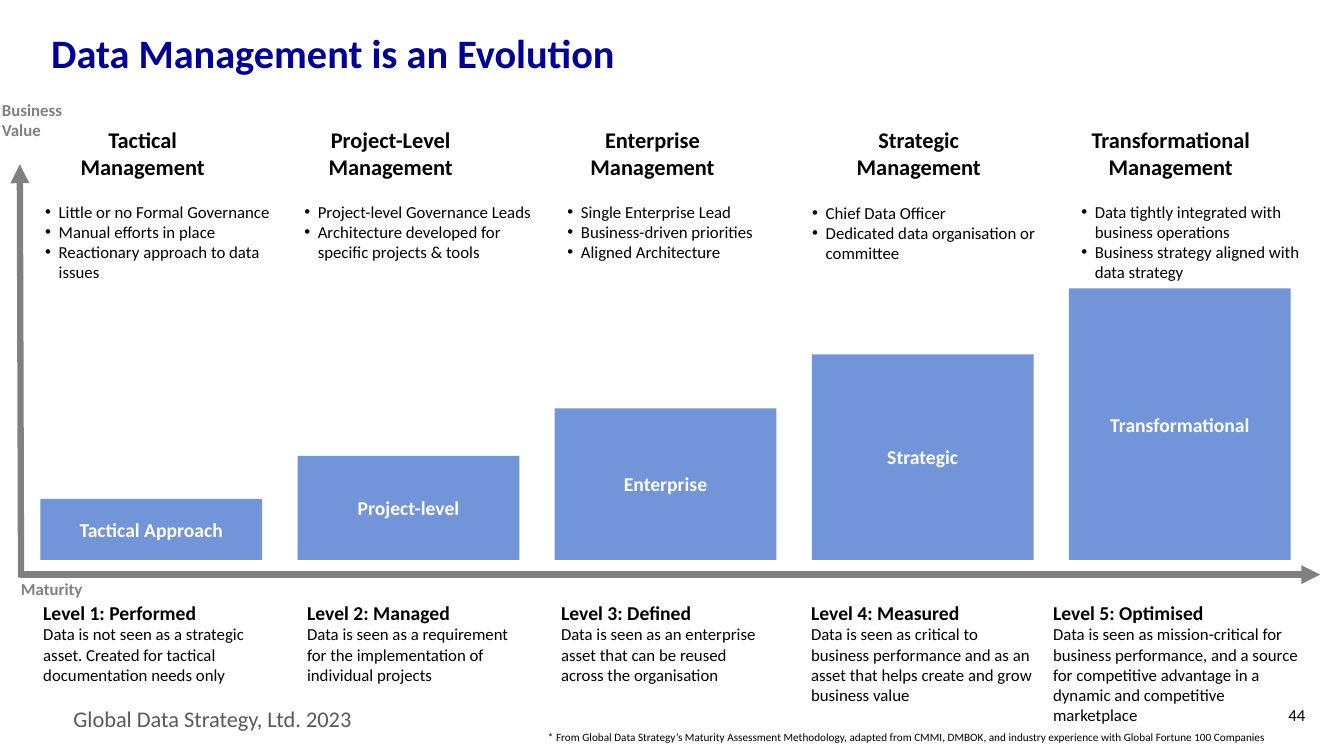
"""Build the slide showing data management maturity as five rising steps."""
from lxml.etree import SubElement
from pptx import Presentation
from pptx.dml.color import RGBColor
from pptx.enum.shapes import MSO_CONNECTOR, MSO_SHAPE
from pptx.enum.text import MSO_ANCHOR, MSO_AUTO_SIZE, PP_ALIGN
from pptx.oxml.ns import qn
from pptx.util import Cm, Pt

NAVY = RGBColor(0x00, 0x00, 0x99)
BLUE = RGBColor(0x72, 0x94, 0xD8)
GREY = RGBColor(0x80, 0x80, 0x80)
DARK_GREY = RGBColor(0x59, 0x59, 0x59)
BLACK = RGBColor(0x00, 0x00, 0x00)
WHITE = RGBColor(0xFF, 0xFF, 0xFF)
FONT = "Calibri"

TITLE = "Data Management is an Evolution"
FOOTER = "Global Data Strategy, Ltd. 2023"
PAGE_NUMBER = "44"
FOOTNOTE = ("* From Global Data Strategy’s Maturity Assessment Methodology, adapted from CMMI, "
            "DMBOK, and industry experience with Global Fortune 100 Companies")
VALUE_AXIS = ["Business", "Value"]
MATURITY_AXIS = ["Maturity"]

STAGES = [
    {"bar": "Tactical Approach", "height": 1.54,
     "heading": ["Tactical", "Management"], "heading_left": 0.84,
     "bullets": ["Little or no Formal Governance", "Manual efforts in place",
                 "Reactionary approach to data issues"],
     "bullets_at": (0.89, 4.95, 6.6),
     "level": "Level 1: Performed", "level_at": (0.84, 6.63),
     "detail": "Data is not seen as a strategic asset. Created for tactical "
               "documentation needs only"},
    {"bar": "Project-level", "height": 2.62,
     "heading": ["Project-Level Management"], "heading_left": 7.09,
     "bullets": ["Project-level Governance Leads",
                 "Architecture developed for specific projects & tools"],
     "bullets_at": (7.42, 4.95, 6.6),
     "level": "Level 2: Managed", "level_at": (7.49, 5.69),
     "detail": "Data is seen as a requirement for the implementation of individual projects"},
    {"bar": "Enterprise", "height": 3.82,
     "heading": ["Enterprise Management"], "heading_left": 13.69,
     "bullets": ["Single Enterprise Lead", "Business-driven priorities",
                 "Aligned Architecture"],
     "bullets_at": (14.05, 4.95, 5.77),
     "level": "Level 3: Defined", "level_at": (13.89, 5.69),
     "detail": "Data is seen as an enterprise asset that can be reused across the organisation"},
    {"bar": "Strategic", "height": 5.18,
     "heading": ["Strategic Management"], "heading_left": 20.4,
     "bullets": ["Chief Data Officer", "Dedicated data organisation or committee"],
     "bullets_at": (20.22, 4.98, 6.38),
     "level": "Level 4: Measured", "level_at": (20.19, 6.17),
     "detail": "Data is seen as critical to business performance and as an asset that "
               "helps create and grow business value"},
    {"bar": "Transformational", "height": 6.84,
     "heading": ["Transformational Management"], "heading_left": 26.75,
     "bullets": ["Data tightly integrated with business operations",
                 "Business strategy aligned with data strategy"],
     "bullets_at": (27.0, 4.95, 6.38),
     "level": "Level 5: Optimised", "level_at": (26.29, 6.86),
     "detail": "Data is seen as mission-critical for business performance, and a source for "
               "competitive advantage in a dynamic and competitive marketplace"},
]

AXES = [((0.53, 14.55), (0.5, 4.14)), ((0.5, 14.48), (33.27, 14.48))]
BAR_LEFT, BAR_STEP, BAR_WIDTH, BASELINE = 1.02, 6.48, 5.59, 14.11
HEADING_TOP, HEADING_WIDTH, LEVEL_TOP = 3.05, 5.51, 15.01


def write(frame, text, size=12, color=BLACK, bold=False, align=PP_ALIGN.LEFT,
          spacing=None, bullet=False, more=False):
    """Write one paragraph, adding it after existing ones when more is set."""
    para = frame.add_paragraph() if more else frame.paragraphs[0]
    para.alignment = align
    if spacing:
        para.line_spacing = spacing
    if bullet:
        properties = para._p.get_or_add_pPr()
        properties.set("marL", str(Cm(0.34)))
        properties.set("indent", str(-Cm(0.34)))
        SubElement(properties, qn("a:buFont")).set("typeface", "Arial")
        SubElement(properties, qn("a:buChar")).set("char", "•")
    span = para.add_run()
    span.text = text
    span.font.name = FONT
    span.font.size = Pt(size)
    span.font.bold = bold
    span.font.color.rgb = color


def add_text(page, lines, left, top, width, height, anchor=MSO_ANCHOR.TOP, grow=True, **style):
    """Add a wrapping text box with one paragraph per line."""
    frame = page.shapes.add_textbox(Cm(left), Cm(top), Cm(width), Cm(height)).text_frame
    frame.word_wrap = True
    frame.vertical_anchor = anchor
    frame.auto_size = MSO_AUTO_SIZE.SHAPE_TO_FIT_TEXT if grow else MSO_AUTO_SIZE.NONE
    for index, line in enumerate(lines):
        write(frame, line, more=index > 0, **style)
    return frame


def add_bar(page, text, left, height):
    """Add a step standing on the baseline."""
    box = page.shapes.add_shape(MSO_SHAPE.RECTANGLE, Cm(left), Cm(BASELINE - height),
                                Cm(BAR_WIDTH), Cm(height))
    box.shadow.inherit = False
    box.fill.solid()
    box.fill.fore_color.rgb = BLUE
    box.line.fill.background()
    box.text_frame.word_wrap = True
    box.text_frame.vertical_anchor = MSO_ANCHOR.MIDDLE
    write(box.text_frame, text, size=14, color=WHITE, bold=True, align=PP_ALIGN.CENTER)


def add_axis(page, start, end):
    """Add a thick grey arrow."""
    axis = page.shapes.add_connector(MSO_CONNECTOR.STRAIGHT, *map(Cm, start + end))
    axis.line.color.rgb = GREY
    axis.line.width = Pt(4.5)
    SubElement(axis.line._get_or_add_ln(), qn("a:tailEnd")).set("type", "triangle")
    SubElement(axis._element.spPr, qn("a:effectLst"))


def main():
    """Draw the slide and save it."""
    deck = Presentation()
    deck.slide_width, deck.slide_height = Cm(33.87), Cm(19.05)
    page = deck.slides.add_slide(deck.slide_layouts[6])

    add_text(page, [FOOTER], 1.6, 17.65, 9.2, 0.94, size=16, color=DARK_GREY)
    add_text(page, [TITLE], 1.04, 0.69, 31.7, 1.42, anchor=MSO_ANCHOR.MIDDLE, grow=False,
             size=28.8, color=NAVY, bold=True, spacing=0.9)
    for start, end in AXES:
        add_axis(page, start, end)
    add_text(page, MATURITY_AXIS, 0.28, 14.45, 3.68, 0.76, color=GREY, bold=True)
    add_text(page, VALUE_AXIS, -0.2, 2.39, 2.41, 1.27, color=GREY, bold=True)

    for index, stage in enumerate(STAGES):
        add_bar(page, stage["bar"], BAR_LEFT + index * BAR_STEP, stage["height"])
        add_text(page, stage["heading"], stage["heading_left"], HEADING_TOP, HEADING_WIDTH, 1.63,
                 size=16, bold=True, align=PP_ALIGN.CENTER)
        add_text(page, stage["bullets"], *stage["bullets_at"], 1.8, bullet=True)
        left, width = stage["level_at"]
        frame = add_text(page, [stage["level"]], left, LEVEL_TOP, width, 2.39, size=14, bold=True)
        write(frame, stage["detail"], more=True)

    add_text(page, [FOOTNOTE], 13.56, 18.29, 20.2, 0.61, size=8)
    add_text(page, [PAGE_NUMBER], 31.55, 17.7, 1.6, 1.02, grow=False,
             align=PP_ALIGN.RIGHT, spacing=0.9)
    deck.save("out.pptx")


if __name__ == "__main__":
    main()
